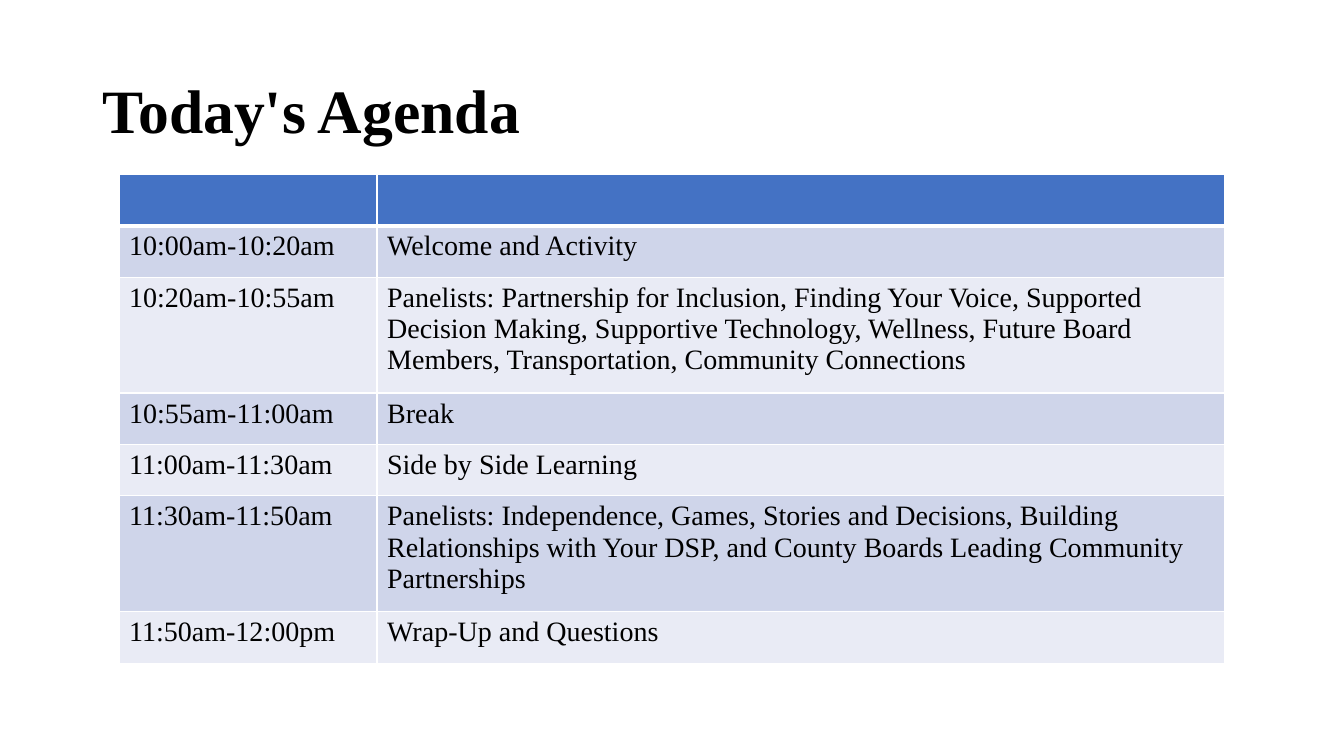
from lxml import etree
from pptx import Presentation
from pptx.dml.color import RGBColor
from pptx.enum.text import MSO_ANCHOR, PP_ALIGN
from pptx.oxml.ns import qn
from pptx.util import Inches, Pt

FONT = "Times New Roman"
BLACK = RGBColor(0x00, 0x00, 0x00)
WHITE = RGBColor(0xFF, 0xFF, 0xFF)
HEADER_BLUE = RGBColor(0x44, 0x72, 0xC4)
BAND_DARK = RGBColor(0xCF, 0xD5, 0xEA)
BAND_LIGHT = RGBColor(0xE9, 0xEB, 0xF5)

COLUMN_WIDTHS = [2.56, 8.41]
SHORT_ROW, TALL_ROW = 0.51, 1.15
AGENDA = [
    ("", "", SHORT_ROW),
    ("10:00am-10:20am", "Welcome and Activity", SHORT_ROW),
    ("10:20am-10:55am",
     "Panelists: Partnership for Inclusion, Finding Your Voice, Supported "
     "Decision Making, Supportive Technology, Wellness, Future Board "
     "Members, Transportation, Community Connections", TALL_ROW),
    ("10:55am-11:00am", "Break", SHORT_ROW),
    ("11:00am-11:30am", "Side by Side Learning", SHORT_ROW),
    ("11:30am-11:50am",
     "Panelists: Independence, Games, Stories and Decisions, Building "
     "Relationships with Your DSP, and County Boards Leading Community "
     "Partnerships", TALL_ROW),
    ("11:50am-12:00pm", "Wrap-Up and Questions", SHORT_ROW),
]


def add_run(p, text, size, bold=False):
    r = p.add_run()
    r.text = text
    r.font.name = FONT
    r.font.size = Pt(size)
    r.font.bold = bold
    r.font.color.rgb = BLACK


def set_borders(cell, bottom):
    """Draw white 1 pt borders, with the bottom width in points."""
    tc_pr = cell._tc.get_or_add_tcPr()
    for side, width in (("L", 1), ("R", 1), ("T", 1), ("B", bottom)):
        ln = etree.SubElement(tc_pr, qn(f"a:ln{side}"), w=str(Pt(width)))
        fill = etree.SubElement(ln, qn("a:solidFill"))
        etree.SubElement(fill, qn("a:srgbClr"), val=str(WHITE))


prs = Presentation()
prs.slide_width, prs.slide_height = Inches(13.33), Inches(7.5)
s = prs.slides.add_slide(prs.slide_layouts[5])
s.background.fill.solid()
s.background.fill.fore_color.rgb = WHITE

title = s.shapes.title
title.left, title.top = Inches(0.92), Inches(0.4)
title.width, title.height = Inches(11.5), Inches(1.45)
tf = title.text_frame
tf.word_wrap = True
tf.vertical_anchor = MSO_ANCHOR.MIDDLE
p = tf.paragraphs[0]
p.alignment = PP_ALIGN.LEFT
p.line_spacing = 0.9
add_run(p, "Today's Agenda", 44, bold=True)

table = s.shapes.add_table(
    len(AGENDA), len(COLUMN_WIDTHS), Inches(1.18), Inches(1.73),
    Inches(sum(COLUMN_WIDTHS)), Inches(sum(row[-1] for row in AGENDA))).table
for column, width in zip(table.columns, COLUMN_WIDTHS):
    column.width = Inches(width)

for i, (time, session, height) in enumerate(AGENDA):
    table.rows[i].height = Inches(height)
    if i == 0:
        color = HEADER_BLUE
    else:
        color = BAND_DARK if i % 2 else BAND_LIGHT
    for j, text in enumerate((time, session)):
        cell = table.cell(i, j)
        set_borders(cell, bottom=3 if i == 0 else 1)
        cell.fill.solid()
        cell.fill.fore_color.rgb = color
        if text:
            add_run(cell.text_frame.paragraphs[0], text, 20)

prs.save("out.pptx")
